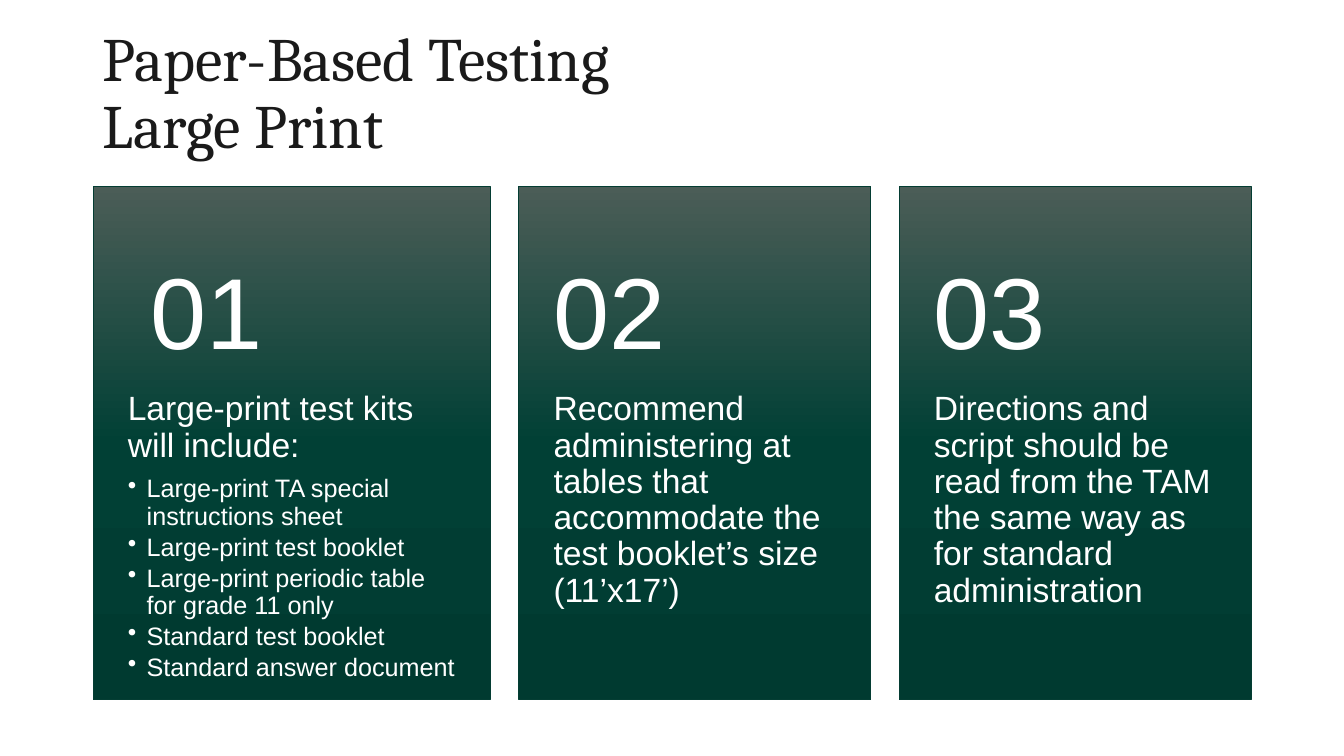
import copy

import lxml.etree
import pptx
import pptx.dml.color
import pptx.enum.shapes
import pptx.enum.text
import pptx.oxml.ns
import pptx.util

Pt = pptx.util.Pt
Anchor = pptx.enum.text.MSO_ANCHOR


def color(code):
    return pptx.dml.color.RGBColor.from_string(code)


def write(frame, text, first=False, size=24, font="Arial", ink="FFFFFF",
          after=0, bullet=False):
    """Add one paragraph of text to a frame."""
    para = frame.paragraphs[0] if first else frame.add_paragraph()
    para.text = text
    para.line_spacing = 0.9
    para.space_after = Pt(after)
    if bullet:
        para.level = 1
        props = para._p.get_or_add_pPr()
        props.set("marL", str(Pt(13.5)))
        props.set("indent", str(Pt(-13.5)))
        lxml.etree.SubElement(props, pptx.oxml.ns.qn("a:buChar"), char="•")
    para.font.size = Pt(size)
    para.font.name = font
    para.font.color.rgb = color(ink)


class Deck:
    """Holds the style and the current slide."""
    top, mid, low, edge = "4B5D57", "014035", "003A30", "043D33"

    def __init__(self):
        self.show = pptx.Presentation()
        self.show.slide_width = Pt(960)
        self.show.slide_height = Pt(540)
        self.slide = self.show.slides.add_slide(self.show.slide_layouts[6])

    def panel(self, left, top, width, height):
        box = self.slide.shapes.add_shape(
            pptx.enum.shapes.MSO_SHAPE.RECTANGLE,
            Pt(left), Pt(top), Pt(width), Pt(height))
        box.shadow.inherit = False
        box.line.color.rgb = color(self.edge)
        box.line.width = Pt(0.5)
        # Three-stop gradient, running downwards
        box.fill.gradient()
        box.fill.gradient_angle = 270
        first = box.fill.gradient_stops[0]._gs
        first.addnext(copy.deepcopy(first))
        stops = zip(box.fill.gradient_stops, (0, 0.5, 1),
                    (self.top, self.mid, self.low))
        for stop, place, code in stops:
            stop.position = place
            stop.color.rgb = color(code)

    def text(self, left, top, width, height, pad=(7.2, 3.6, 7.2, 3.6),
             anchor=Anchor.TOP):
        box = self.slide.shapes.add_textbox(
            Pt(left), Pt(top), Pt(width), Pt(height))
        frame = box.text_frame
        frame.word_wrap = True
        frame.vertical_anchor = anchor
        (frame.margin_left, frame.margin_top,
         frame.margin_right, frame.margin_bottom) = map(Pt, pad)
        return frame

    def card(self, left, width, shift, num, head, items):
        self.panel(left, 132.8, width, 367)
        body = self.text(left, 279.8, width, 220, (24.8, 0, 24.8, 26))
        write(body, head, first=True, after=8.4)
        for item in items:
            write(body, item, size=18, after=2.7, bullet=True)
        label = self.text(left + shift, 165.6, 251.4, 121,
                          (24.8, 13, 24.8, 13), Anchor.MIDDLE)
        write(label, f"{num:02}", first=True, size=72, after=25.2)


def main():
    deck = Deck()

    # Title
    title = deck.text(66.24, 15.84, 828, 104.4, anchor=Anchor.MIDDLE)
    write(title, "Paper-Based Testing\vLarge Print", first=True,
          size=44, font="Cambria", ink="1A1A1A")

    # Cards: left, width, shift of the number, heading, bullets
    cards = [
        (66.5, 283.7, 16.5, "Large-print test kits will include:",
         ["Large-print TA special instructions sheet",
          "Large-print test booklet",
          "Large-print periodic table for grade 11 only",
          "Standard test booklet",
          "Standard answer document"]),
        (370.6, 251.4, 0, "Recommend administering at tables that "
         "accommodate the test booklet’s size (11’x17’)", []),
        (642.2, 251.4, 0, "Directions and script should be read from the "
         "TAM the same way as for standard administration", []),
    ]
    for num, (left, width, shift, head, items) in enumerate(cards, 1):
        deck.card(left, width, shift, num, head, items)

    deck.show.save("out.pptx")


if __name__ == "__main__":
    main()
